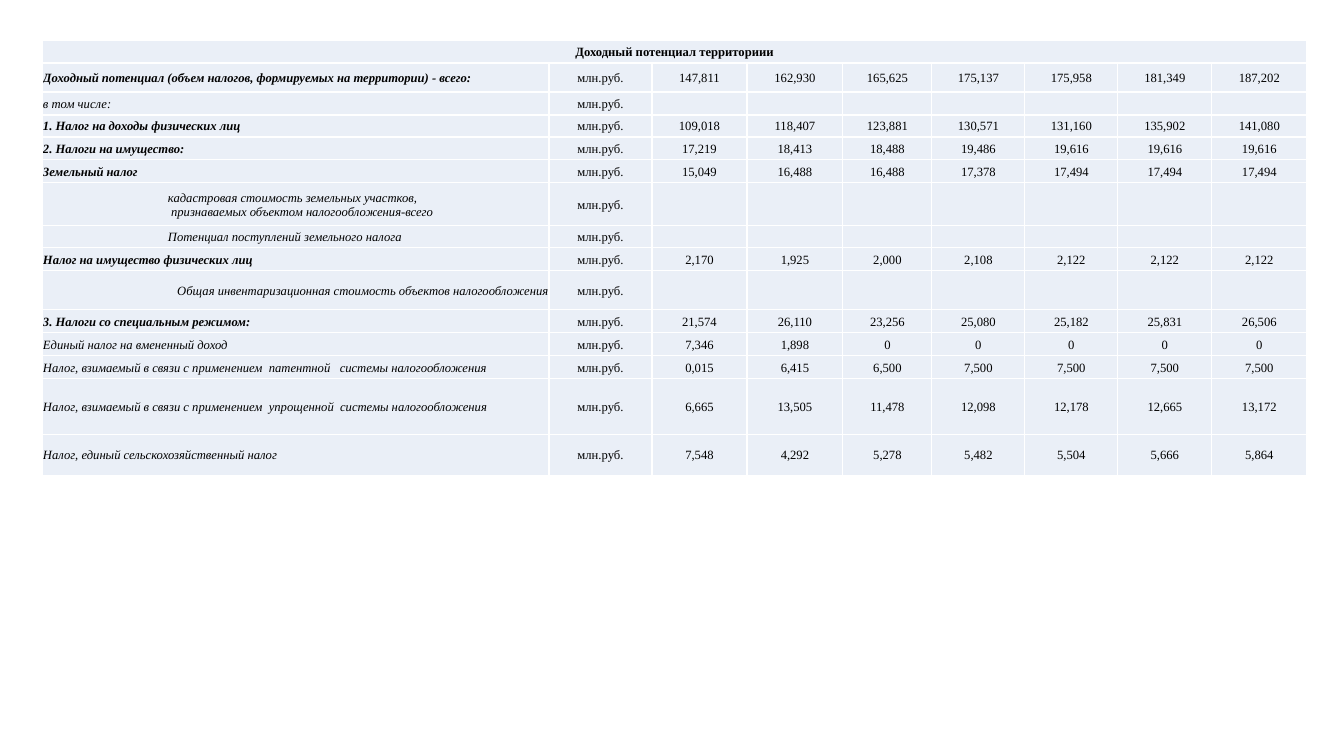
import dataclasses

import lxml.etree
import pptx
import pptx.dml.color
import pptx.enum.text
import pptx.oxml.ns
import pptx.util

ALIGN = pptx.enum.text.PP_ALIGN
SLIDE_W, SLIDE_H = 1344, 756
COLUMNS = [507, 103, 95, 96, 89, 93, 93, 94, 95]
INDENT = 126
TITLE = "Доходный потенциал территориии"
UNIT = "млн.руб."


@dataclasses.dataclass(frozen=True)
class Theme:
    """Colours and type of the slide."""
    font: str = "Times New Roman"
    size: int = 9
    ink: str = "000000"
    fill: str = "EAEFF7"
    border: str = "FFFFFF"
    border_pt: int = 1


THEME = Theme()
TOTAL = {"bold": True, "italic": True}
ITEM = {"italic": True}
DETAIL = {"italic": True, "indent": INDENT}
DETAIL_RIGHT = {"italic": True, "align": ALIGN.RIGHT}

ROWS = [
    (29, "Доходный потенциал (объем налогов, формируемых на территории) - всего:", TOTAL,
     "147,811 162,930 165,625 175,137 175,958 181,349 187,202"),
    (23, "в том числе:", ITEM, ""),
    (22, "1. Налог на доходы физических лиц", TOTAL,
     "109,018 118,407 123,881 130,571 131,160 135,902 141,080"),
    (23, "2. Налоги на имущество:", TOTAL,
     "17,219 18,413 18,488 19,486 19,616 19,616 19,616"),
    (23, "Земельный налог", TOTAL,
     "15,049 16,488 16,488 17,378 17,494 17,494 17,494"),
    (43, "кадастровая стоимость земельных участков,\n"
         " признаваемых объектом налогообложения-всего", DETAIL, ""),
    (22, "Потенциал поступлений земельного налога", DETAIL, ""),
    (23, "Налог на имущество физических лиц", TOTAL,
     "2,170 1,925 2,000 2,108 2,122 2,122 2,122"),
    (39, "Общая инвентаризационная стоимость объектов налогообложения", DETAIL_RIGHT, ""),
    (23, "3. Налоги со специальным режимом:", TOTAL,
     "21,574 26,110 23,256 25,080 25,182 25,831 26,506"),
    (23, "Единый налог на вмененный доход", ITEM, "7,346 1,898 0 0 0 0 0"),
    (23, "Налог, взимаемый в связи с применением  патентной   системы налогообложения", ITEM,
     "0,015 6,415 6,500 7,500 7,500 7,500 7,500"),
    (56, "Налог, взимаемый в связи с применением  упрощенной  системы налогообложения", ITEM,
     "6,665 13,505 11,478 12,098 12,178 12,665 13,172"),
    (41, "Налог, единый сельскохозяйственный налог", ITEM,
     "7,548 4,292 5,278 5,482 5,504 5,666 5,864"),
]
HEIGHTS = [23] + [row[0] for row in ROWS]


def px(n):
    """Turn pixels into EMU."""
    return pptx.util.Emu(round(n * 914400 / 100.8))


def rgb(value):
    """Make a colour from its hex digits."""
    return pptx.dml.color.RGBColor.from_string(value)


def add_xml(parent, tag, **attributes):
    """Append a DrawingML element to the parent."""
    name = pptx.oxml.ns.qn("a:" + tag)
    return lxml.etree.SubElement(parent, name, attributes)


def style_cell(cell, indent=1):
    """Give a cell its borders, fill and margins."""
    width = str(int(pptx.util.Pt(THEME.border_pt)))
    tc_pr = cell._tc.get_or_add_tcPr()
    for side in "LRTB":
        line = add_xml(tc_pr, "ln" + side, w=width)
        add_xml(add_xml(line, "solidFill"), "srgbClr", val=THEME.border)
    cell.fill.solid()
    cell.fill.fore_color.rgb = rgb(THEME.fill)
    layout = {"margin_left": px(indent), "margin_right": px(1), "margin_top": px(1),
              "margin_bottom": 0, "vertical_anchor": pptx.enum.text.MSO_ANCHOR.MIDDLE}
    for name, value in layout.items():
        setattr(cell, name, value)


def write_cell(cell, text, bold=False, italic=False, align=ALIGN.CENTER, indent=1):
    """Style a cell and write its text."""
    style_cell(cell, indent)
    p = cell.text_frame.paragraphs[0]
    p.text = text
    p.alignment = align
    font = {"name": THEME.font, "size": pptx.util.Pt(THEME.size),
            "bold": bold, "italic": italic}
    for r in p.runs:
        for name, value in font.items():
            setattr(r.font, name, value)
        r.font.color.rgb = rgb(THEME.ink)
    size = str(THEME.size * 100)
    for br in p._p.findall(pptx.oxml.ns.qn("a:br")):
        add_xml(br, "rPr", sz=size)
    if not text:
        add_xml(p._p, "endParaRPr", sz=size)


def add_revenue_table(s, x, y, columns, heights):
    """Place the revenue table with its top left corner at x, y."""
    sp = s.shapes.add_table(len(heights), len(columns), px(x), px(y),
                            px(sum(columns)), px(sum(heights)))
    table = sp.table
    table.first_row = table.horz_banding = False
    for column, width in zip(table.columns, columns):
        column.width = px(width)
    for row, height in zip(table.rows, heights):
        row.height = px(height)

    for c in range(len(columns)):
        write_cell(table.cell(0, c), "" if c else TITLE, bold=True)
    table.cell(0, 0).merge(table.cell(0, len(columns) - 1))
    for i, (_, label, style, numbers) in enumerate(ROWS, 1):
        write_cell(table.cell(i, 0), label, **{"align": ALIGN.LEFT, **style})
        values = numbers.split() or [""] * (len(columns) - 2)
        for c, text in enumerate([UNIT] + values, 1):
            write_cell(table.cell(i, c), text)


def main():
    """Build and save the slide."""
    prs = pptx.Presentation()
    prs.slide_width, prs.slide_height = px(SLIDE_W), px(SLIDE_H)
    s = prs.slides.add_slide(prs.slide_layouts[6])
    add_revenue_table(s, 42, 40, COLUMNS, HEIGHTS)
    prs.save("out.pptx")


if __name__ == "__main__":
    main()
